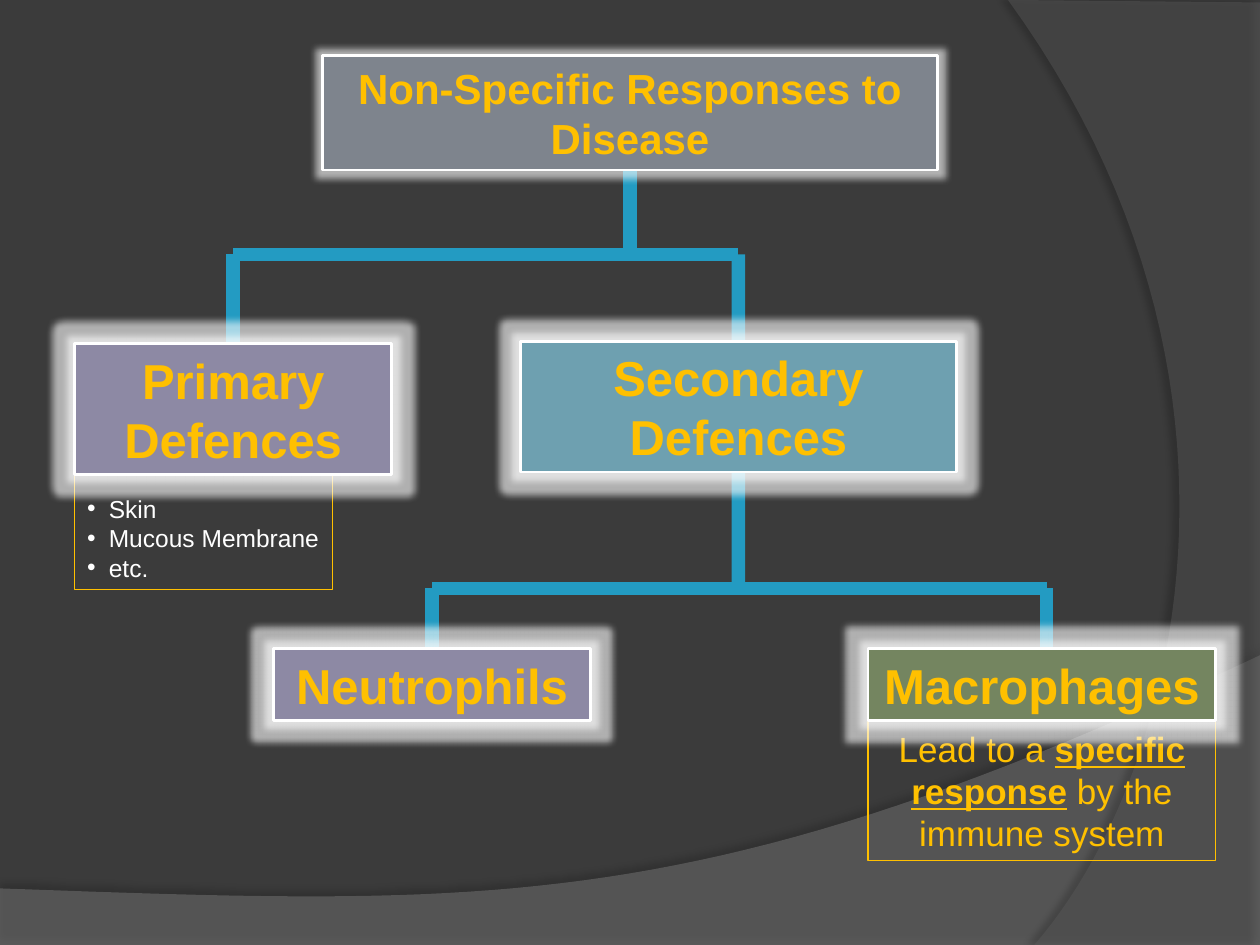
from dataclasses import dataclass

from lxml import etree
from pptx import Presentation
from pptx import util as u
from pptx.dml.color import RGBColor
from pptx.enum import shapes as sh, text as tx
from pptx.oxml.ns import qn


@dataclass(frozen=True)
class Theme:
    font: str = "Arial"
    background: str = "3B3B3B"
    lower_wave: str = "7F7F7F"
    right_wave: str = "5E5E5E"
    accent: str = "FFC000"
    white: str = "FFFFFF"
    branch: str = "239BC2"
    slate: str = "7E848D"
    purple: str = "8D89A4"
    teal: str = "6EA0B0"
    green: str = "748560"
    title_size: int = 24
    node_size: int = 28
    note_size: int = 20
    list_size: int = 14


@dataclass(frozen=True)
class Box:
    left: float
    top: float
    width: float
    height: float

    @property
    def center(self) -> float:
        return self.left + self.width / 2


@dataclass(frozen=True)
class Node:
    label: str
    box: Box
    fill: str


THEME = Theme()
WIDTH, HEIGHT = 25.4, 19.05
TITLE_BOX = Box(6.5, 1.12, 12.4, 2.31)
LIST_BOX = Box(1.5, 9.53, 5.21, 2.36)
NOTE_BOX = Box(17.5, 14.53, 7.01, 2.82)
PRIMARY = Node("Primary Defences", Box(1.5, 6.93, 6.4, 2.64), THEME.purple)
SECONDARY = Node("Secondary Defences", Box(10.49, 6.88, 8.79, 2.64), THEME.teal)
NEUTROPHILS = Node("Neutrophils", Box(5.51, 13.08, 6.4, 1.45), THEME.purple)
MACROPHAGES = Node("Macrophages", Box(17.5, 13.08, 7.01, 1.45), THEME.green)
DEFENCE_LEVEL, CELL_LEVEL = 5.13, 11.86
MACROPHAGE_BRANCH = 21.1
TOP, BOTTOM = 0, 2


def rgb(color: str) -> RGBColor:
    return RGBColor.from_string(color)


def set_all(target, values: dict) -> None:
    for name, value in values.items():
        setattr(target, name, value)


def place(shape, box: Box) -> None:
    set_all(shape, {name: u.Cm(getattr(box, name)) for name in ("left", "top", "width", "height")})


def set_font(run, size: int, color: str, **more) -> None:
    set_all(run.font, {"name": THEME.font, "size": u.Pt(size), **more})
    run.font.color.rgb = rgb(color)


def outline(shape, color: str, width: float) -> None:
    shape.line.color.rgb = rgb(color)
    shape.line.width = u.Pt(width)


def add_effect(shape, kind: str, color: str, alpha: int, **attributes) -> None:
    properties = shape._element.spPr
    effects = properties.find(qn("a:effectLst"))
    if effects is None:
        effects = etree.SubElement(properties, qn("a:effectLst"))
    effect = etree.SubElement(effects, qn(f"a:{kind}"), {k: str(v) for k, v in attributes.items()})
    tone = etree.SubElement(effect, qn("a:srgbClr"), val=color)
    etree.SubElement(tone, qn("a:alpha"), val=str(alpha * 1000))


def curve(start, control1, control2, end, steps: int = 48) -> list:
    """Points along a cubic curve, without its start."""
    points = []
    for step in range(1, steps + 1):
        t = step / steps
        weights = ((1 - t) ** 3, 3 * t * (1 - t) ** 2, 3 * t * t * (1 - t), t ** 3)
        pairs = zip(start, control1, control2, end)
        points.append(tuple(sum(w * c for w, c in zip(weights, axis)) for axis in pairs))
    return points


def add_wave(slide, points: list, color: str, opacity: int, shadow: int, direction: int) -> None:
    start, *rest = [(u.Cm(x), u.Cm(y)) for x, y in points]
    builder = slide.shapes.build_freeform(*start)
    builder.add_line_segments(rest, close=True)
    wave = builder.convert_to_shape()
    wave.shadow.inherit = False
    wave.fill.solid()
    wave.fill.fore_color.rgb = rgb(color)
    tone = wave._element.spPr.find(qn("a:solidFill"))[0]
    etree.SubElement(tone, qn("a:alpha"), val=str(opacity * 1000))
    wave.line.fill.background()
    add_effect(wave, "outerShdw", "000000", shadow, blurRad=u.Pt(4), dist=u.Pt(4),
               dir=direction * 60000, algn="ctr", rotWithShape=0)


def add_rectangle(slide, box: Box):
    rectangle = slide.shapes.add_shape(sh.MSO_SHAPE.RECTANGLE, 0, 0, 0, 0)
    place(rectangle, box)
    rectangle.shadow.inherit = False
    rectangle.text_frame.word_wrap = True
    rectangle.text_frame.paragraphs[0].alignment = tx.PP_ALIGN.CENTER
    return rectangle


def style_node(shape, label: str, fill: str, size: int) -> None:
    shape.fill.solid()
    shape.fill.fore_color.rgb = rgb(fill)
    outline(shape, THEME.white, 1.5)
    add_effect(shape, "glow", THEME.white, 60, rad=u.Pt(8))
    frame = shape.text_frame
    set_all(frame, {"auto_size": tx.MSO_AUTO_SIZE.NONE, "vertical_anchor": tx.MSO_ANCHOR.MIDDLE})
    run = frame.paragraphs[0].add_run()
    run.text = label
    set_font(run, size, THEME.accent, bold=True)


def add_node(slide, node: Node):
    shape = add_rectangle(slide, node.box)
    style_node(shape, node.label, node.fill, THEME.node_size)
    return shape


def add_branch(slide, x1: float, y1: float, x2: float, y2: float, begin=None, end=None) -> None:
    branch = slide.shapes.add_connector(
        sh.MSO_CONNECTOR.STRAIGHT, u.Cm(x1), u.Cm(y1), u.Cm(x2), u.Cm(y2))
    outline(branch, THEME.branch, 7.75)
    etree.SubElement(branch._element.spPr, qn("a:effectLst"))
    if begin is not None:
        branch.begin_connect(begin, BOTTOM)
    if end is not None:
        branch.end_connect(end, TOP)


def fill_list(body, items: list) -> None:
    place(body, LIST_BOX)
    outline(body, THEME.accent, 0.75)
    frame = body.text_frame
    set_all(frame, {"auto_size": tx.MSO_AUTO_SIZE.NONE, "margin_right": 0,
                    "vertical_anchor": tx.MSO_ANCHOR.TOP})
    for index, item in enumerate(items):
        paragraph = frame.add_paragraph() if index else frame.paragraphs[0]
        set_all(paragraph, {"space_before": u.Pt(0), "line_spacing": 1.0 if index else 1.5})
        properties = paragraph._p.get_or_add_pPr()
        properties.set("marL", str(u.Cm(0.44)))
        properties.set("indent", str(-u.Cm(0.44)))
        etree.SubElement(properties, qn("a:buChar"), char="•")
        run = paragraph.add_run()
        run.text = item
        set_font(run, THEME.list_size, THEME.white)


def main() -> None:
    deck = Presentation()
    set_all(deck, {"slide_width": u.Cm(WIDTH), "slide_height": u.Cm(HEIGHT)})
    slide = deck.slides.add_slide(deck.slide_layouts[1])
    title, body = slide.placeholders
    slide.background.fill.solid()
    slide.background.fill.fore_color.rgb = rgb(THEME.background)

    # Background waves
    lower = [(0, 17.91), (0, HEIGHT), (WIDTH, HEIGHT), (WIDTH, 13.21)]
    lower += curve(lower[-1], (14.2, 18.52), (9.93, 18.26), lower[0])
    add_wave(slide, lower, THEME.lower_wave, 45, 35, 270)
    right = [(WIDTH, 0.05), (WIDTH, HEIGHT), (20.85, HEIGHT)]
    right += curve(right[-1], (23.75, 15.72), (25.86, 7.62), (20.32, 0))
    add_wave(slide, right, THEME.right_wave, 40, 45, 180)

    # Macrophage note and list of primary defences
    note = add_rectangle(slide, NOTE_BOX)
    note.fill.background()
    outline(note, THEME.accent, 0.75)
    for words, strong in (("Lead to a ", False), ("specific response", True),
                          (" by the immune system", False)):
        run = note.text_frame.paragraphs[0].add_run()
        run.text = words
        set_font(run, THEME.note_size, THEME.accent, bold=strong, underline=strong)
    fill_list(body, ["Skin", "Mucous Membrane", "etc."])
    slide.shapes._spTree.append(body._element)

    # Title and nodes
    place(title, TITLE_BOX)
    title.text_frame.paragraphs[0].alignment = tx.PP_ALIGN.CENTER
    style_node(title, "Non-Specific Responses to Disease", THEME.slate, THEME.title_size)
    nodes = [add_node(slide, n) for n in (PRIMARY, SECONDARY, NEUTROPHILS, MACROPHAGES)]
    primary, secondary, neutrophils, _ = nodes

    # Branches
    root, left, right_x = (b.center for b in (TITLE_BOX, PRIMARY.box, SECONDARY.box))
    cell = NEUTROPHILS.box.center
    add_branch(slide, root, 3.43, root, DEFENCE_LEVEL, begin=title)
    add_branch(slide, left, DEFENCE_LEVEL, right_x, DEFENCE_LEVEL)
    add_branch(slide, left, DEFENCE_LEVEL, left, PRIMARY.box.top, end=primary)
    add_branch(slide, right_x, DEFENCE_LEVEL, right_x, SECONDARY.box.top, end=secondary)
    add_branch(slide, right_x, 9.52, right_x, CELL_LEVEL, begin=secondary)
    add_branch(slide, cell, CELL_LEVEL, MACROPHAGE_BRANCH, CELL_LEVEL)
    add_branch(slide, cell, CELL_LEVEL, cell, NEUTROPHILS.box.top, end=neutrophils)
    add_branch(slide, MACROPHAGE_BRANCH, CELL_LEVEL, MACROPHAGE_BRANCH, MACROPHAGES.box.top)

    # Glowing boxes lie over the branches
    for shape in (title, *nodes):
        slide.shapes._spTree.append(shape._element)
    deck.save("out.pptx")


if __name__ == "__main__":
    main()
